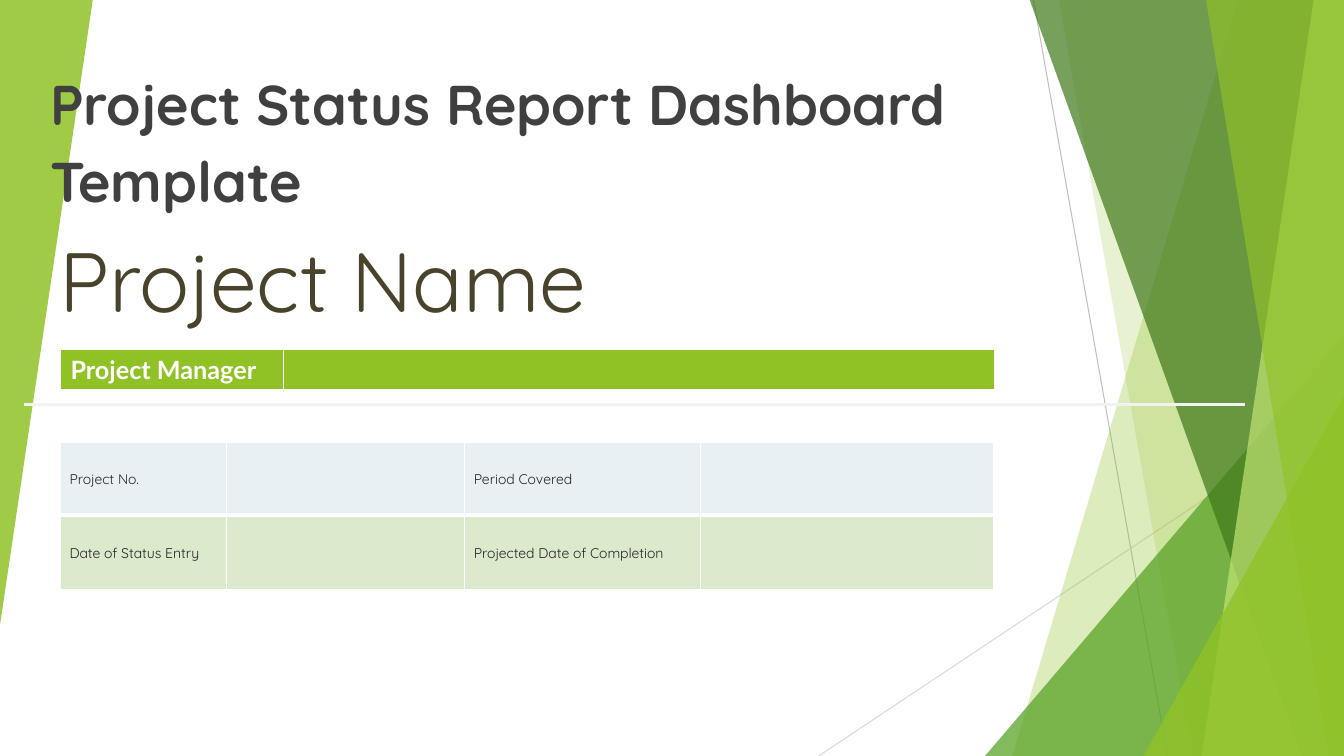
"""Build the project status title slide."""
from dataclasses import dataclass
from typing import Any, Union

from lxml.etree import SubElement
from pptx import Presentation
from pptx.dml.color import RGBColor
from pptx.enum.shapes import MSO_CONNECTOR, MSO_SHAPE
from pptx.enum.text import MSO_ANCHOR, MSO_AUTO_SIZE
from pptx.oxml.ns import qn
from pptx.util import Pt

PX = 9144
WIDE, HIGH, TOP = 1333, 750, -1


@dataclass(frozen=True)
class Theme:
    """Colours, fonts and type sizes of the slide."""
    lime: str = "90C226"
    leaf: str = "54A021"
    moss: str = "3F7819"
    pale: str = "C0E474"
    white: str = "FFFFFF"
    mist: str = "F2F2F2"
    ash: str = "D9D9D9"
    grey: str = "BFBFBF"
    slate: str = "404040"
    olive: str = "48432A"
    ink: str = "262626"
    ice: str = "E8F0F4"
    sage: str = "DBE9CD"
    main: str = "Quicksand"
    side: str = "Lato"
    huge: int = 60
    big: int = 40
    mid: int = 18
    small: int = 10


@dataclass(frozen=True)
class Box:
    """A place on the slide in px."""
    left: int
    top: int
    width: int
    height: int

    def emu(self) -> tuple[int, ...]:
        """Return the four lengths in EMU."""
        return tuple(n * PX for n in (self.left, self.top, self.width, self.height))


@dataclass(frozen=True)
class Band:
    """A full-height strip from a slanted left edge to the right side."""
    head: int
    foot: int
    hue: str
    alpha: int


@dataclass(frozen=True)
class Wedge:
    """A right triangle, turned if need be."""
    box: Box
    hue: str
    alpha: int
    turn: int = 0


@dataclass(frozen=True)
class Rule:
    """A straight line."""
    start: tuple[int, int]
    end: tuple[int, int]
    hue: str
    width: float


@dataclass(frozen=True)
class Type:
    """The look of a run of text."""
    face: str
    size: int
    hue: str
    bold: bool = False


@dataclass(frozen=True)
class Title:
    """A line of free text."""
    box: Box
    text: str
    type: Type
    para: dict[str, Any]


@dataclass(frozen=True)
class Grid:
    """A table with its row fills and cell format."""
    box: Box
    cols: list[int]
    rows: list[int]
    text: list[list[str]]
    fills: list[str]
    edges: list[dict[str, int]]
    type: Type
    cell: dict[str, Any]


T = Theme()
RULES = [
    Rule((1025, 0), (1158, 750), T.grey, 0.75),
    Rule((1333, 403), (812, 750), T.ash, 0.75),
]
FACETS: list[Union[Band, Wedge]] = [
    Band(1228, 1004, T.lime, 30),
    Band(1050, 1183, T.lime, 20),
    Wedge(Box(977, 333, 356, 417), T.leaf, 72),
    Band(1021, 1291, T.moss, 70),
    Band(1303, 1192, T.pale, 70),
    Band(1196, 1318, T.lime, 65),
    Wedge(Box(1134, 393, 199, 357), T.lime, 80),
    Wedge(Box(0, 0, 92, 620), T.lime, 85, 180),
]
TITLES = [
    Title(Box(40, 54, 1152, 81), "Project Status Report Dashboard Template",
          Type(T.main, T.big, T.slate, True),
          {"line_spacing": 1.15, "space_after": Pt(8)}),
    Title(Box(49, 222, 1227, 111), "Project Name",
          Type(T.main, T.huge, T.olive), {}),
]
SPLIT = Rule((24, 401), (1235, 401), T.mist, 2.25)
EDGE = {"a:lnL": 1, "a:lnR": 1, "a:lnT": 1, "a:lnB": 3}
GRIDS = [
    Grid(Box(60, 439, 926, 146), [165, 236, 234, 291], [72, 74],
         [["Project No.", "", "Period Covered", ""],
          ["Date of Status Entry", "", "Projected Date of Completion", ""]],
         [T.ice, T.sage], [EDGE, {**EDGE, "a:lnT": 3, "a:lnB": 1}],
         Type(T.main, T.small, T.ink),
         {"vertical_anchor": MSO_ANCHOR.MIDDLE, "margin_left": 9 * PX,
          "margin_top": PX, "margin_right": PX, "margin_bottom": 0}),
    Grid(Box(60, 347, 926, 41), [221, 705], [41], [["Project Manager", ""]],
         [T.lime], [EDGE], Type(T.side, T.mid, T.white, True), {}),
]


def apply(item: Any, form: dict[str, Any]) -> None:
    """Set each format value on the item."""
    for key, value in form.items():
        setattr(item, key, value)


def paint(fill: Any, hue: str) -> None:
    """Give a fill one solid colour."""
    fill.solid()
    fill.fore_color.rgb = RGBColor.from_string(hue)


def write(para: Any, text: str, kind: Type) -> None:
    """Add a styled run to a paragraph."""
    run = para.add_run()
    run.text = text
    apply(run.font, {"name": kind.face, "size": Pt(kind.size), "bold": kind.bold})
    run.font.color.rgb = RGBColor.from_string(kind.hue)


def draw_rule(shapes: Any, rule: Rule) -> None:
    """Draw a straight line."""
    ends = [n * PX for n in rule.start + rule.end]
    line = shapes.add_connector(MSO_CONNECTOR.STRAIGHT, *ends)
    paint(line.line.fill, rule.hue)
    line.line.width = Pt(rule.width)
    SubElement(line._element.spPr, qn("a:effectLst"))


def draw_facet(shapes: Any, facet: Union[Band, Wedge]) -> None:
    """Draw a see-through band or wedge."""
    if isinstance(facet, Band):
        pen = shapes.build_freeform(facet.head, TOP, scale=PX)
        pen.add_line_segments([(WIDE, TOP), (WIDE, HIGH), (facet.foot, HIGH)])
        shape = pen.convert_to_shape()
    else:
        shape = shapes.add_shape(MSO_SHAPE.ISOSCELES_TRIANGLE, *facet.box.emu())
        shape.adjustments[0] = 1.0
        shape.rotation = facet.turn
    shape.shadow.inherit = False
    shape.line.fill.background()
    paint(shape.fill, facet.hue)
    tint = next(shape._element.spPr.iter(qn("a:srgbClr")))
    SubElement(tint, qn("a:alpha"), val=str(facet.alpha * 1000))


def draw_title(shapes: Any, title: Title) -> None:
    """Draw a line of free text."""
    frame = shapes.add_textbox(*title.box.emu()).text_frame
    apply(frame, {"word_wrap": True, "auto_size": MSO_AUTO_SIZE.SHAPE_TO_FIT_TEXT})
    para = frame.paragraphs[0]
    apply(para, title.para)
    write(para, title.text, title.type)


def edge_cell(cell: Any, edges: dict[str, int]) -> None:
    """Put white borders ahead of the cell fill."""
    props = cell._tc.get_or_add_tcPr()
    for spot, (tag, width) in enumerate(edges.items()):
        line = SubElement(props, qn(tag), w=str(Pt(width)))
        SubElement(SubElement(line, qn("a:solidFill")), qn("a:srgbClr"), val=T.white)
        props.insert(spot, line)


def draw_grid(shapes: Any, grid: Grid) -> None:
    """Draw a table."""
    table = shapes.add_table(len(grid.rows), len(grid.cols), *grid.box.emu()).table
    apply(table, {"first_row": False, "horz_banding": False})
    for col, width in zip(table.columns, grid.cols):
        col.width = width * PX
    for r, height in enumerate(grid.rows):
        table.rows[r].height = height * PX
        for c, text in enumerate(grid.text[r]):
            cell = table.cell(r, c)
            apply(cell, grid.cell)
            paint(cell.fill, grid.fills[r])
            edge_cell(cell, grid.edges[r])
            if text:
                write(cell.text_frame.paragraphs[0], text, grid.type)


def main() -> None:
    """Build and save the deck."""
    deck = Presentation()
    apply(deck, {"slide_width": WIDE * PX, "slide_height": HIGH * PX})
    shapes = deck.slides.add_slide(deck.slide_layouts[6]).shapes
    steps = [(draw_rule, RULES), (draw_facet, FACETS), (draw_title, TITLES),
             (draw_rule, [SPLIT]), (draw_grid, GRIDS)]
    for draw, items in steps:
        for item in items:
            draw(shapes, item)
    deck.save("out.pptx")


if __name__ == "__main__":
    main()
